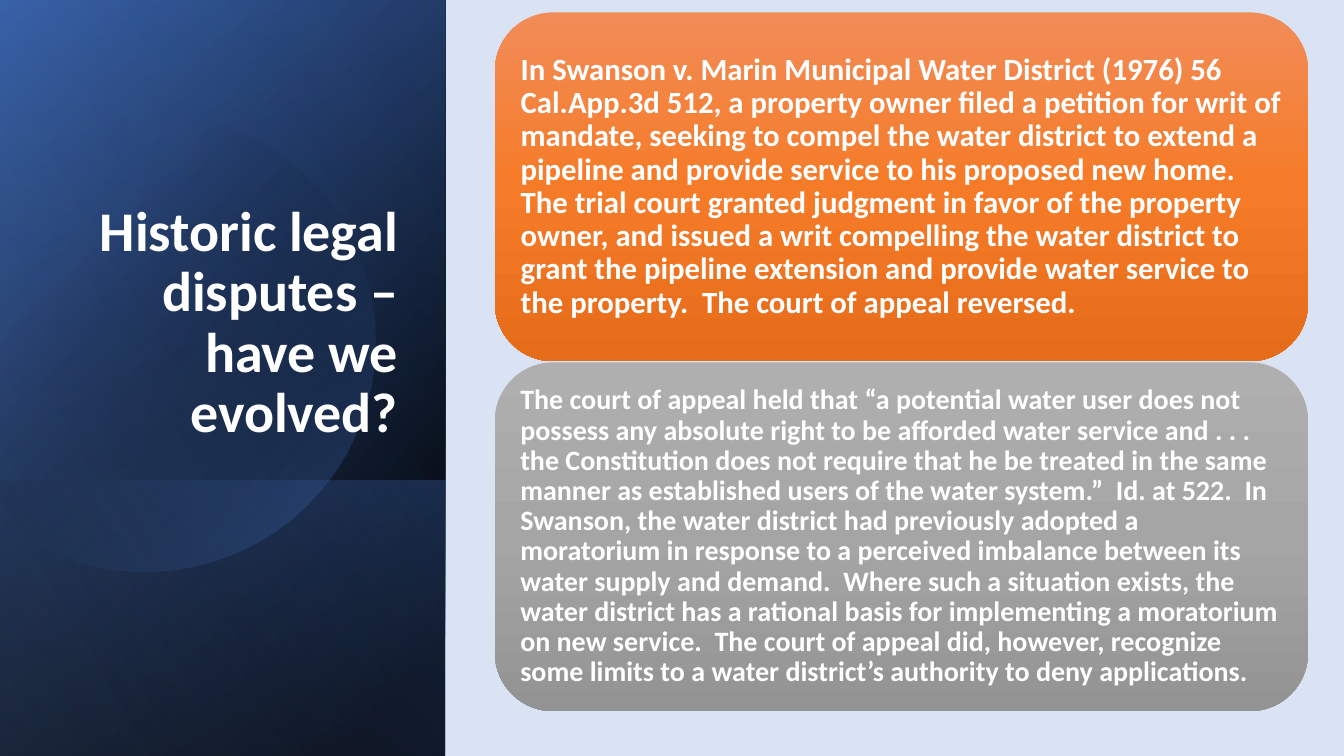
from lxml.etree import SubElement
from pptx import Presentation
from pptx.dml.color import RGBColor
from pptx.enum.shapes import MSO_SHAPE as Shape
from pptx.enum.text import MSO_ANCHOR as Anchor, MSO_AUTO_SIZE as AutoSize, PP_ALIGN as Align
from pptx.oxml.ns import qn
from pptx.util import Pt

PANEL_WIDTH = 318
TITLE = "Historic legal disputes – have we evolved?"
CASE = (
    "In Swanson v. Marin Municipal Water District (1976) 56 Cal.App.3d 512, a property owner "
    "filed a petition for writ of mandate, seeking to compel the water district to extend a "
    "pipeline and provide service to his proposed new home.  The trial court granted judgment "
    "in favor of the property owner, and issued a writ compelling the water district to grant "
    "the pipeline extension and provide water service to the property.  The court of appeal "
    "reversed."
)
HOLDING = (
    "The court of appeal held that “a potential water user does not possess any absolute right "
    "to be afforded water service and . . . the Constitution does not require that he be "
    "treated in the same manner as established users of the water system.”  Id. at 522.  In "
    "Swanson, the water district had previously adopted a moratorium in response to a perceived "
    "imbalance between its water supply and demand.  Where such a situation exists, the water "
    "district has a rational basis for implementing a moratorium on new service.  The court of "
    "appeal did, however, recognize some limits to a water district’s authority to deny "
    "applications."
)
DISC_START = (107.3, 79.2)
DISC_SEGMENTS = [
    [(177.1, 80.6), (241.2, 127.4), (261.4, 198)],
    [(286.6, 285.8), (236.2, 376.6), (149, 401.8)],
    [(94.3, 417.6), (38.2, 403.9), (-2.2, 370.1)],
    [(-10.8, 362.2)],
    [(-10.8, 126)],
    [(0, 115.9)],
    [(16.6, 102.2), (36, 92.2), (57.6, 85.7)],
    [(74.2, 81.4), (90.7, 79.2), DISC_START],
]


def colour(value):
    return RGBColor.from_string(value)


def write(frame, text, size=20, align=Align.LEFT, anchor=Anchor.MIDDLE, font="Calibri",
          fill="FFFFFF", bold=True, spacing=0.9, inset=None):
    frame.word_wrap = True
    frame.auto_size = AutoSize.NONE
    frame.vertical_anchor = anchor
    if inset is not None:
        frame.margin_left = frame.margin_right = Pt(inset)
        frame.margin_top = frame.margin_bottom = Pt(inset)
    para = frame.paragraphs[0]
    para.alignment = align
    para.line_spacing = spacing
    span = para.add_run()
    span.text = text
    span.font.name = font
    span.font.size = Pt(size)
    span.font.bold = bold
    span.font.color.rgb = colour(fill)


class SlideBuilder:
    """Holds the style and the current slide and adds each kind of element."""

    def __init__(self, page, background):
        self.shapes = page.shapes
        page.background.fill.solid()
        page.background.fill.fore_color.rgb = colour(background)

    def shade(self, shape, stops, angle):
        shape.shadow.inherit = False
        shape.line.fill.background()
        shape.fill.gradient()
        shape.fill.gradient_angle = 360 - angle
        stop_list = next(shape._element.iter(qn("a:gsLst")))
        for stop in list(stop_list):
            stop_list.remove(stop)
        for position, value, opacity in stops:
            stop = SubElement(stop_list, qn("a:gs"), pos=str(position * 1000))
            tint = SubElement(stop, qn("a:srgbClr"), val=value)
            if opacity < 100:
                SubElement(tint, qn("a:alpha"), val=str(opacity * 1000))

    def panel(self, top, height, stops, angle):
        left = (PANEL_WIDTH - height) / 2
        box = self.shapes.add_shape(Shape.RECTANGLE, Pt(left), Pt(top - left),
                                    Pt(height), Pt(PANEL_WIDTH))
        box.rotation = 90
        next(box._element.iter(qn("a:xfrm"))).set("flipH", "1")
        self.shade(box, stops, angle)

    def disc(self, stops, angle):
        builder = self.shapes.build_freeform(*map(Pt, DISC_START), scale=1.0)
        ends = [tuple(map(Pt, segment[-1])) for segment in DISC_SEGMENTS]
        builder.add_line_segments(ends, close=True)
        shape = builder.convert_to_shape()
        lines = list(shape._element.iter(qn("a:lnTo")))
        for line, segment in zip(lines, DISC_SEGMENTS):
            if len(segment) == 3:
                line.tag = qn("a:cubicBezTo")
                for index, (x, y) in enumerate(segment[:2]):
                    point = SubElement(line, qn("a:pt"), x=str(Pt(x) - shape.left),
                                       y=str(Pt(y) - shape.top))
                    line.insert(index, point)
        self.shade(shape, stops, angle)

    def title(self, text, left, top, width, height):
        box = self.shapes.title
        box.left, box.top, box.width, box.height = map(Pt, (left, top, width, height))
        write(box.text_frame, text, size=40, align=Align.RIGHT, anchor=Anchor.BOTTOM)
        self.shapes._spTree.append(box._element)

    def card(self, text, top, size, inset, tints):
        box = self.shapes.add_shape(Shape.ROUNDED_RECTANGLE, Pt(353.5), Pt(top),
                                    Pt(580.8), Pt(249.1))
        self.shade(box, [(place, tint, 100) for place, tint in zip((0, 50, 100), tints)], 90)
        write(box.text_frame, text, size=size, inset=inset)


def main():
    deck = Presentation()
    deck.slide_width, deck.slide_height = Pt(960), Pt(540)
    slide = SlideBuilder(deck.slides.add_slide(deck.slide_layouts[5]), "DAE3F3")
    slide.panel(0, 540, [(8, "000000", 100), (100, "2F5597", 100)], 50)
    slide.panel(0, 540, [(0, "000000", 0), (99, "4472C4", 46)], 30)
    slide.panel(343, 197, [(2, "4472C4", 29), (100, "000000", 30)], 130)
    slide.disc([(29, "000000", 0), (100, "4472C4", 43)], 45)
    slide.panel(0, 540, [(0, "000000", 0), (99, "8FAADC", 11)], 120)
    slide.title(TITLE, 46, 132.8, 245.5, 188.6)
    slide.card(CASE, 8.9, 22, 6.3, ("F18C57", "F67B28", "E56C19"))
    slide.card(HOLDING, 258.9, 20, 6, ("AFAFAF", "A5A5A5", "939393"))
    deck.save("out.pptx")


if __name__ == "__main__":
    main()
